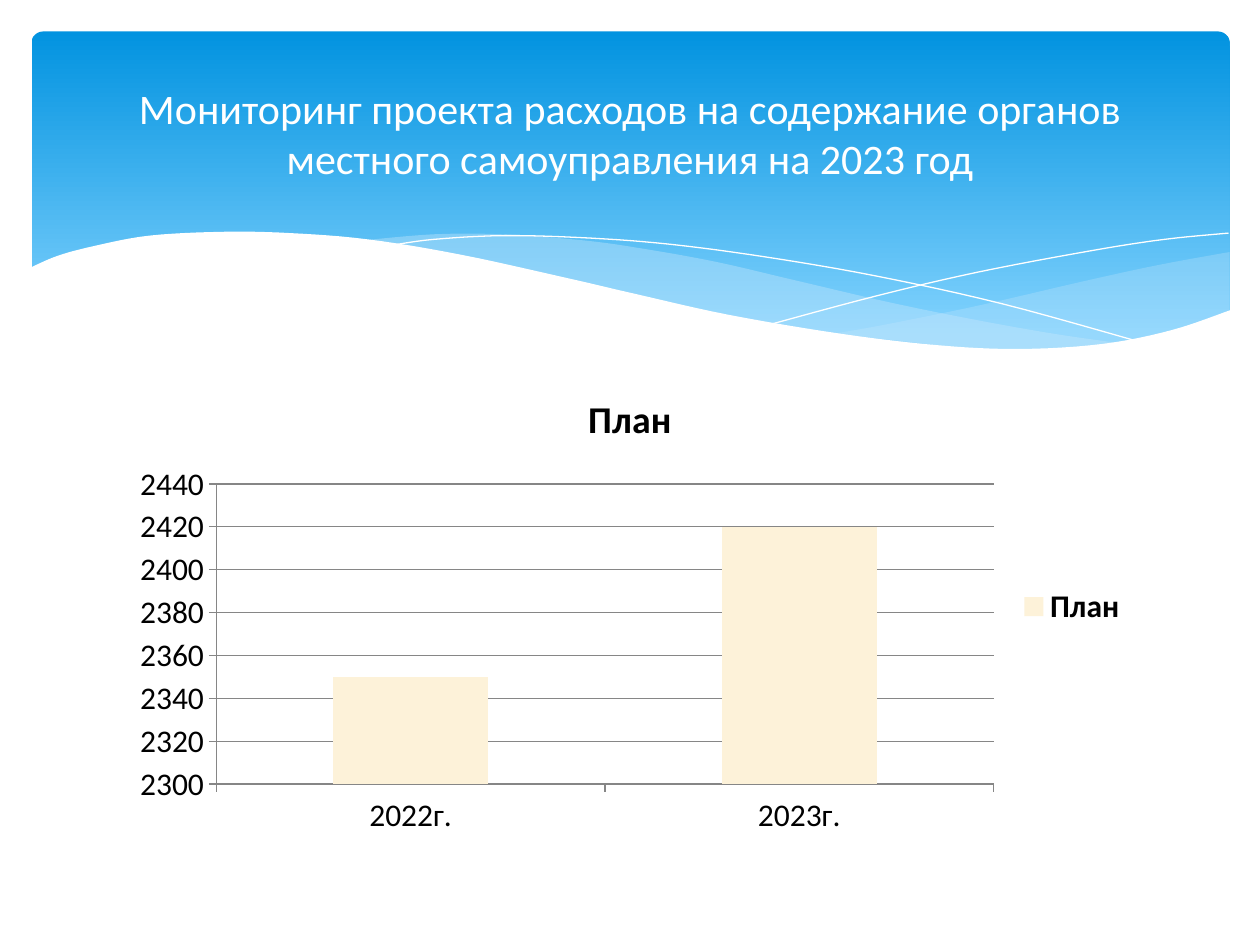
from lxml.etree import SubElement
from pptx import Presentation
from pptx.chart.data import CategoryChartData
from pptx.dml.color import RGBColor
from pptx.enum.chart import XL_CHART_TYPE, XL_LEGEND_POSITION, XL_TICK_MARK
from pptx.enum.shapes import MSO_SHAPE
from pptx.enum.text import MSO_ANCHOR, PP_ALIGN
from pptx.oxml.ns import qn
from pptx.util import Pt

SCALE = 9144  # EMU per px, 100 px to the inch
FONT = "Calibri"
WHITE, BLACK, GREY = "FFFFFF", "000000", "868686"
PALE_BLUE, CREAM = "C6E7FC", "FDF2D9"
STEPS = 6  # straight pieces between two knots of a curve

RIGHT_WAVE_TOP = [(976, 200), (921, 210), (861, 223), (779, 242), (706, 257), (661, 265)]
RIGHT_WAVE_BOTTOM = [(661, 265), (719, 271), (769, 277), (814, 278), (863, 275),
                     (905, 269), (942, 259), (976, 247)]
MIDDLE_WAVE_TOP = [(893, 273), (837, 265), (775, 254), (706, 240), (629, 222), (569, 208),
                   (514, 198), (465, 191), (399, 186), (344, 186), (286, 191)]
MIDDLE_WAVE_BOTTOM = [(286, 191), (342, 199), (404, 211), (449, 222), (530, 240),
                      (601, 255), (665, 266), (722, 274), (773, 277), (828, 278), (893, 273)]
FALLING_LINE = [(309, 195), (344, 190), (401, 187), (469, 189), (533, 194), (608, 204),
                (695, 219), (795, 241), (907, 272)]
RISING_LINE = [(613, 257), (695, 235), (776, 216), (866, 199), (924, 190), (975, 185)]
WHITE_WAVE_TOP = [(977, 246), (930, 262), (875, 273), (809, 277), (744, 274), (668, 265),
                  (579, 250), (503, 233), (447, 220), (365, 202), (292, 190), (230, 185),
                  (177, 184), (119, 187), (76, 195), (46, 203), (23, 213)]
WHITE_WAVE_BASE = [(23, 329), (977, 329)]


def px(*lengths):
    return [round(length * SCALE) for length in lengths]


def color(hex_string):
    return RGBColor.from_string(hex_string)


def apply_format(target, values):
    for name, value in values.items():
        setattr(target, name, value)


def style_font(font, size, hex_string, bold=False):
    apply_format(font, {"name": FONT, "size": Pt(size), "bold": bold})
    font.color.rgb = color(hex_string)


def style_line(line, hex_string, width):
    line.color.rgb = color(hex_string)
    line.width = Pt(width)


def smooth(knots):
    """Return points on a Catmull-Rom curve through the knots."""
    padded = [knots[0], *knots, knots[-1]]
    points = [knots[0]]
    for a, b, c, d in zip(padded, padded[1:], padded[2:], padded[3:]):
        for step in range(1, STEPS + 1):
            t = step / STEPS
            points.append(tuple(
                0.5 * (2 * q + (r - p) * t + (2 * p - 5 * q + 4 * r - s) * t ** 2
                       + (3 * q - p - 3 * r + s) * t ** 3)
                for p, q, r, s in zip(a, b, c, d)))
    return points


def add_outline(slide, points, closed):
    start, *rest = [px(*point) for point in points]
    builder = slide.shapes.build_freeform(*start, scale=1.0)
    builder.add_line_segments(rest, close=closed)
    shape = builder.convert_to_shape()
    shape.shadow.inherit = False
    return shape


def add_wave(slide, points, hex_string, opacity=100):
    shape = add_outline(slide, points, True)
    shape.fill.solid()
    shape.fill.fore_color.rgb = color(hex_string)
    shape.line.fill.background()
    if opacity < 100:
        rgb = shape.fill._xPr.find(f"{qn('a:solidFill')}/{qn('a:srgbClr')}")
        SubElement(rgb, qn("a:alpha"), val=str(opacity * 1000))


def add_curved_line(slide, knots):
    shape = add_outline(slide, smooth(knots), False)
    shape.fill.background()
    style_line(shape.line, WHITE, 0)


def add_banner(slide):
    shape = slide.shapes.add_shape(MSO_SHAPE.ROUNDED_RECTANGLE, *px(25, 25, 951, 270))
    shape.adjustments[0] = 0.034
    shape.shadow.inherit = False
    shape.line.fill.background()
    shape.fill.gradient()
    shape.fill.gradient_angle = 270
    stops = [(0, "0293E0"), (0.9, "83D3FE")]
    for stop, (position, hex_string) in zip(shape.fill.gradient_stops, stops):
        stop.position = position
        stop.color.rgb = color(hex_string)


def add_title(slide, text):
    frame = slide.shapes.add_textbox(*px(50, 37, 900, 137)).text_frame
    apply_format(frame, {"word_wrap": True, "vertical_anchor": MSO_ANCHOR.MIDDLE})
    paragraph = frame.paragraphs[0]
    paragraph.alignment = PP_ALIGN.CENTER
    run = paragraph.add_run()
    run.text = text
    style_font(run.font, 24, WHITE)


def add_plan_chart(slide):
    data = CategoryChartData()
    data.categories = ["2022г.", "2023г."]
    data.add_series("План", [2350, 2420])
    chart = slide.shapes.add_chart(
        XL_CHART_TYPE.COLUMN_CLUSTERED, *px(95, 293, 810, 377), data).chart
    style_font(chart.font, 18, BLACK)

    chart.has_title = True
    title = chart.chart_title.text_frame
    title.text = "План"
    style_font(title.paragraphs[0].runs[0].font, 21.6, BLACK, bold=True)

    chart.has_legend = True
    apply_format(chart.legend, {"position": XL_LEGEND_POSITION.RIGHT,
                                "include_in_layout": False})
    style_font(chart.legend.font, 18, BLACK, bold=True)

    plot = chart.plots[0]
    apply_format(plot, {"gap_width": 150, "vary_by_categories": False})
    fill = plot.series[0].format.fill
    fill.solid()
    fill.fore_color.rgb = color(CREAM)

    apply_format(chart.value_axis, {"minimum_scale": 2300, "maximum_scale": 2440,
                                    "major_unit": 20, "has_major_gridlines": True})
    style_line(chart.value_axis.major_gridlines.format.line, GREY, 0.75)
    for axis in (chart.category_axis, chart.value_axis):
        axis.major_tick_mark = XL_TICK_MARK.OUTSIDE
        style_line(axis.format.line, GREY, 0.75)


def main():
    presentation = Presentation()
    width, height = px(1000, 750)
    apply_format(presentation, {"slide_width": width, "slide_height": height})
    slide = presentation.slides.add_slide(presentation.slide_layouts[6])

    add_banner(slide)
    add_wave(slide, smooth(RIGHT_WAVE_TOP) + smooth(RIGHT_WAVE_BOTTOM), PALE_BLUE, 29)
    add_wave(slide, smooth(MIDDLE_WAVE_TOP) + smooth(MIDDLE_WAVE_BOTTOM), PALE_BLUE, 40)
    for knots in (FALLING_LINE, RISING_LINE):
        add_curved_line(slide, knots)
    add_wave(slide, smooth(WHITE_WAVE_TOP) + WHITE_WAVE_BASE, WHITE)
    add_plan_chart(slide)
    add_title(slide, "Мониторинг проекта расходов на содержание органов "
                     "местного самоуправления на 2023 год")
    presentation.save("out.pptx")


if __name__ == "__main__":
    main()
